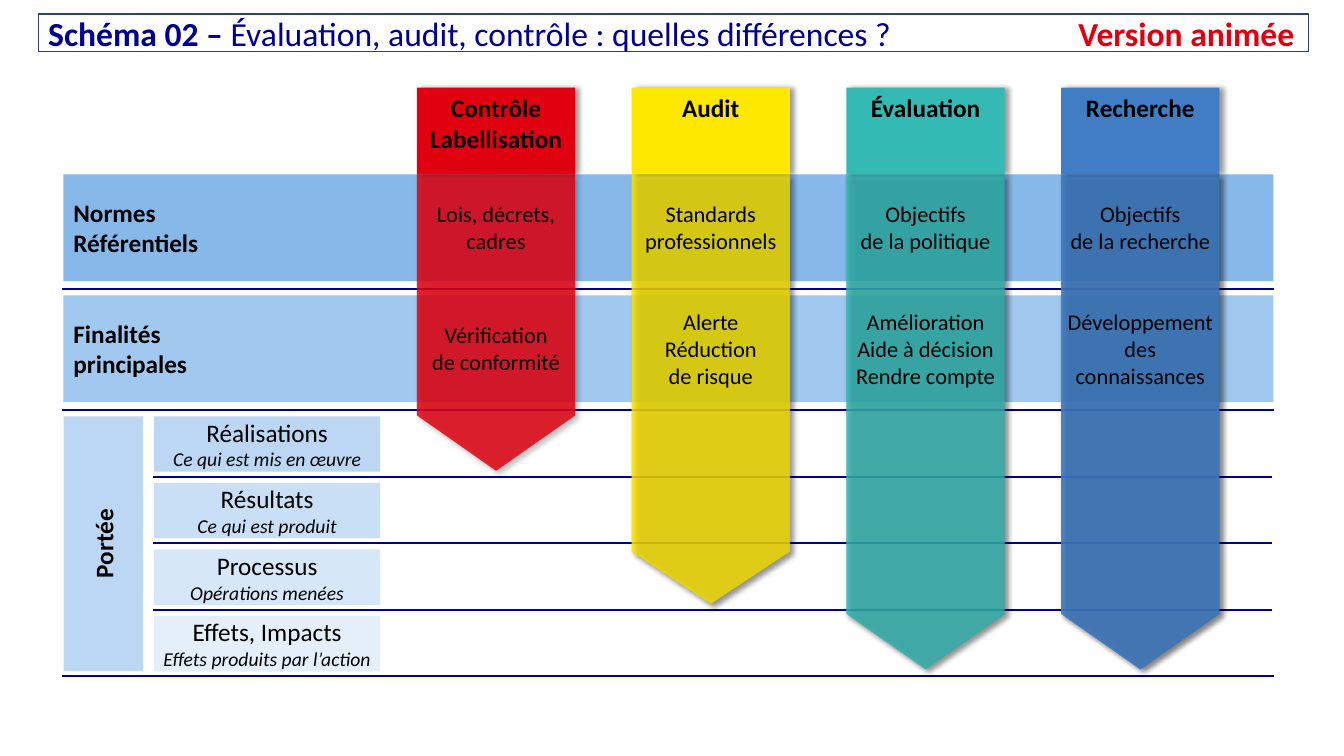
from lxml import etree
from pptx import Presentation
from pptx.dml.color import RGBColor
from pptx.enum.shapes import MSO_CONNECTOR, MSO_SHAPE
from pptx.enum.text import MSO_ANCHOR, PP_ALIGN
from pptx.oxml.ns import qn
from pptx.util import Inches, Pt

RECTANGLE, PENTAGON = MSO_SHAPE.RECTANGLE, MSO_SHAPE.PENTAGON
STRAIGHT = MSO_CONNECTOR.STRAIGHT
TOP, MIDDLE = MSO_ANCHOR.TOP, MSO_ANCHOR.MIDDLE
LEFT, CENTER = PP_ALIGN.LEFT, PP_ALIGN.CENTER

COLORS = {
    "black": "000000", "navy": "000091", "frame": "2F4077", "band": "7AB1E8",
    "red": "E1000F", "yellow": "FFE800", "teal": "34BAB5", "blue": "417DC4",
}
HEADING = {"size": Pt(18), "bold": True}
LABEL = {"size": Pt(18)}
DETAIL = {"size": Pt(14), "italic": True}
BODY = {"size": Pt(16)}
TITLE = {"size": Pt(24)}

GRID_LEFT, GRID_WIDTH = 0.63, 12
BAND_TOP, BAND_HEIGHT, BAND_STEP = 1.73, 1.06, 1.2
SCOPE_TOP, SCOPE_HEIGHT, SCOPE_STEP = 4.13, 0.55, 0.66
SCOPE_LEFT, SCOPE_WIDTH = 1.53, 2.24
ARROW_CENTER, ARROW_STEP, ARROW_WIDTH = 4.92, 2.13, 1.57
HEADER_HEIGHT = 0.86

BANDS = [(["Normes", "Référentiels"], 90), (["Finalités", "principales"], 70)]
SCOPES = [
    ("Réalisations", "Ce qui est mis en œuvre"),
    ("Résultats", "Ce qui est produit"),
    ("Processus", "Opérations menées"),
    ("Effets, Impacts", "Effets produits par l’action"),
]
ARROWS = [
    (["Contrôle", "Labellisation"], "red", 60, 2.94, 0.35, (True, False),
     [["Lois, décrets,", "cadres"], ["Vérification", "de conformité"]]),
    (["Audit"], "yellow", 60, 4.26, 0.33, (True, True),
     [["Standards professionnels"], ["Alerte", "Réduction", "de risque"]]),
    (["Évaluation"], "teal", 60, 4.91, 0.35, (True, True),
     [["Objectifs", "de la politique"],
      ["Amélioration", "Aide à décision", "Rendre compte"]]),
    (["Recherche"], "blue", 70, 4.91, 0.35, (True, True),
     [["Objectifs", "de la recherche"],
      ["Développement des", "connaissances"]]),
]


def rgb(name):
    return RGBColor.from_string(COLORS[name])


def add_run(paragraph, text, formats, color="black"):
    run = paragraph.add_run()
    run.text = text
    run.font.name = "Calibri"
    run.font.color.rgb = rgb(color)
    for name, value in formats.items():
        setattr(run.font, name, value)


def write_lines(shape, lines, align=CENTER, anchor=MIDDLE, margin=None):
    frame = shape.text_frame
    frame.word_wrap = True
    frame.vertical_anchor = anchor
    if margin is not None:
        for side in ("left", "top", "right", "bottom"):
            setattr(frame, f"margin_{side}", Inches(margin))
    for index, (text, formats) in enumerate(lines):
        paragraph = frame.paragraphs[0] if index == 0 else frame.add_paragraph()
        paragraph.alignment = align
        add_run(paragraph, text, formats)


def add_block(slide, kind, box, color=None, opacity=100):
    shape = slide.shapes.add_shape(kind, *map(Inches, box))
    shape.shadow.inherit = False
    shape.line.fill.background()
    if color is None:
        shape.fill.background()
        return shape
    shape.fill.solid()
    shape.fill.fore_color.rgb = rgb(color)
    if opacity < 100:
        tint = shape._element.spPr.find(f"{qn('a:solidFill')}/{qn('a:srgbClr')}")
        etree.SubElement(tint, qn("a:alpha"), val=str(opacity * 1000))
    return shape


def add_shadow(shape, degrees):
    effects = shape._element.spPr.find(qn("a:effectLst"))
    shadow = etree.SubElement(
        effects, qn("a:outerShdw"), blurRad=str(Pt(4)), dist=str(Pt(3)),
        dir=str(degrees * 60000), algn="ctr", rotWithShape="0")
    shade = etree.SubElement(shadow, qn("a:srgbClr"), val=COLORS["black"])
    etree.SubElement(shade, qn("a:alpha"), val="40000")


def add_rule(slide, left, right, top):
    rule = slide.shapes.add_connector(
        STRAIGHT, Inches(left), Inches(top), Inches(right), Inches(top))
    rule.line.color.rgb = rgb("navy")
    rule.line.width = Pt(1.5)
    etree.SubElement(rule._element.spPr, qn("a:effectLst"))


def add_title(slide):
    title = add_block(slide, RECTANGLE, (0.38, 0.14, 12.6, 0.37))
    title.line.color.rgb = rgb("frame")
    title.line.width = Pt(1)
    write_lines(title, [])
    paragraph = title.text_frame.paragraphs[0]
    paragraph.alignment = LEFT
    tabs = etree.SubElement(paragraph._p.get_or_add_pPr(), qn("a:tabLst"))
    etree.SubElement(tabs, qn("a:tab"), pos=str(Inches(12.36)), algn="r")
    add_run(paragraph, "Schéma 02 – ", {**TITLE, "bold": True}, "navy")
    add_run(paragraph, "Évaluation, audit, contrôle : quelles différences ?\t",
            TITLE, "navy")
    add_run(paragraph, "Version animée", {**TITLE, "bold": True}, "red")


def add_bands(slide):
    for row, (lines, opacity) in enumerate(BANDS):
        top = BAND_TOP + row * BAND_STEP
        band = add_block(slide, RECTANGLE,
                         (GRID_LEFT, top, GRID_WIDTH, BAND_HEIGHT), "band", opacity)
        write_lines(band, [(line, HEADING) for line in lines], LEFT)
        add_rule(slide, 0.62, 12.64, top + 1.14)


def add_scopes(slide):
    height = 3 * SCOPE_STEP + SCOPE_HEIGHT
    scope = add_block(slide, RECTANGLE,
                      (GRID_LEFT, SCOPE_TOP, 0.79, height), "band", 50)
    write_lines(scope, [("Portée", HEADING)])
    scope.text_frame._txBody.bodyPr.set("vert", "vert270")
    for row, (name, detail) in enumerate(SCOPES):
        top = SCOPE_TOP + row * SCOPE_STEP
        cell = add_block(slide, RECTANGLE,
                         (SCOPE_LEFT, top, SCOPE_WIDTH, SCOPE_HEIGHT),
                         "band", 50 - 10 * row)
        write_lines(cell, [(name, LABEL), (detail, DETAIL)], margin=0.05)
        last = row == len(SCOPES) - 1
        left, right = (0.62, 12.64) if last else (1.52, 12.62)
        add_rule(slide, left, right, top + 0.6)


def add_arrow(slide, column, heading, color, opacity, length, tip, shadows, cells):
    center = ARROW_CENTER + column * ARROW_STEP
    left = center - ARROW_WIDTH / 2
    for shadowed in shadows:
        arrow = add_block(slide, PENTAGON,
                          (center - length / 2,
                           BAND_TOP + (length - ARROW_WIDTH) / 2,
                           length, ARROW_WIDTH), color, opacity)
        arrow.rotation = 90
        arrow.adjustments[0] = tip
        if shadowed:
            add_shadow(arrow, 45)
    header = add_block(slide, RECTANGLE,
                       (left, BAND_TOP - HEADER_HEIGHT, ARROW_WIDTH, HEADER_HEIGHT),
                       color)
    add_shadow(header, 0)
    write_lines(header, [(line, HEADING) for line in heading], anchor=TOP)
    for row, lines in enumerate(cells):
        box = (left, BAND_TOP + row * BAND_STEP, ARROW_WIDTH, 1.05)
        text = slide.shapes.add_textbox(*map(Inches, box))
        write_lines(text, [(line, BODY) for line in lines], margin=0.04)


def main():
    presentation = Presentation()
    presentation.slide_width = Inches(13.33)
    presentation.slide_height = Inches(7.5)
    slide = presentation.slides.add_slide(presentation.slide_layouts[6])
    add_bands(slide)
    add_scopes(slide)
    for column, arrow in enumerate(ARROWS):
        add_arrow(slide, column, *arrow)
    add_title(slide)
    presentation.save("out.pptx")


if __name__ == "__main__":
    main()
